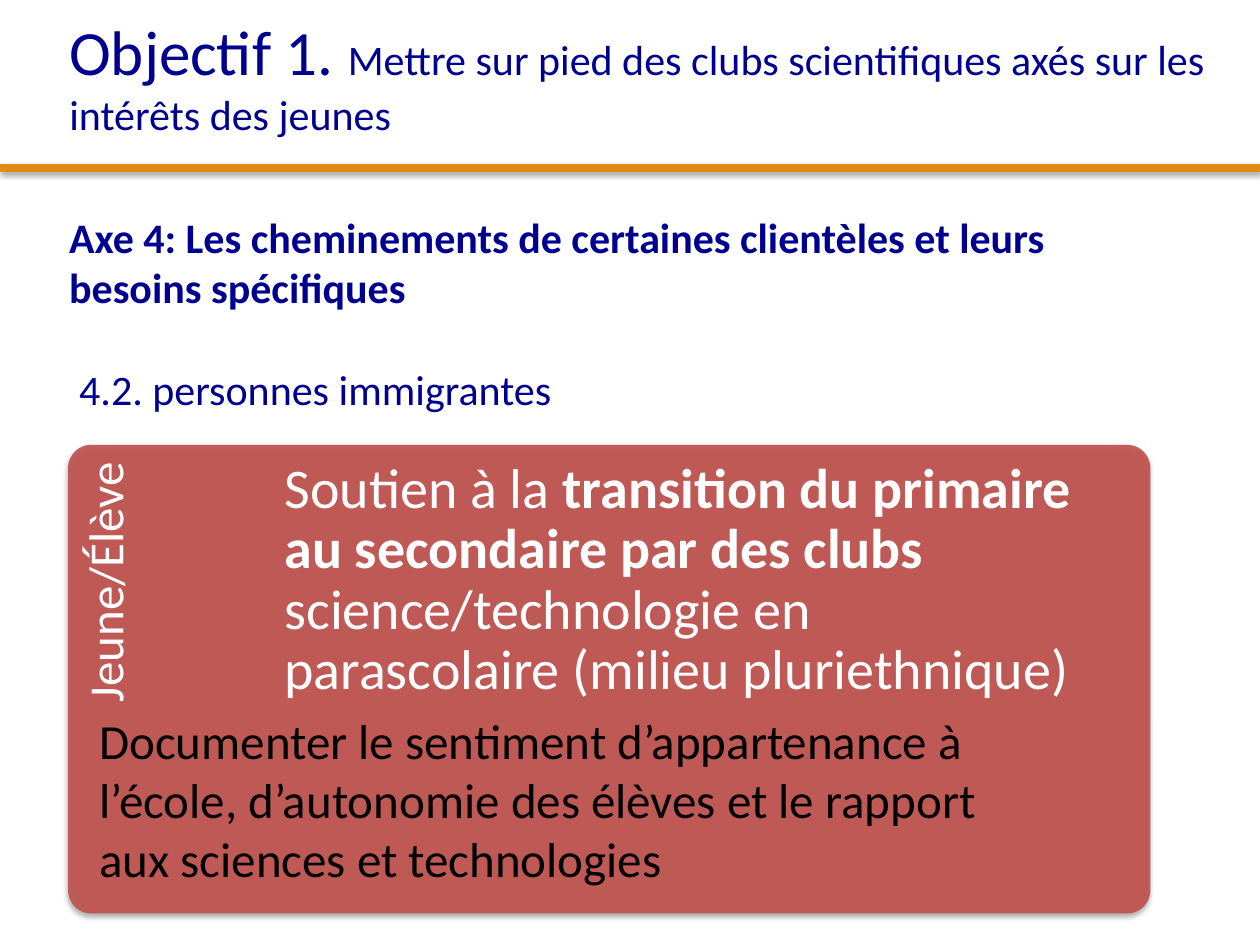
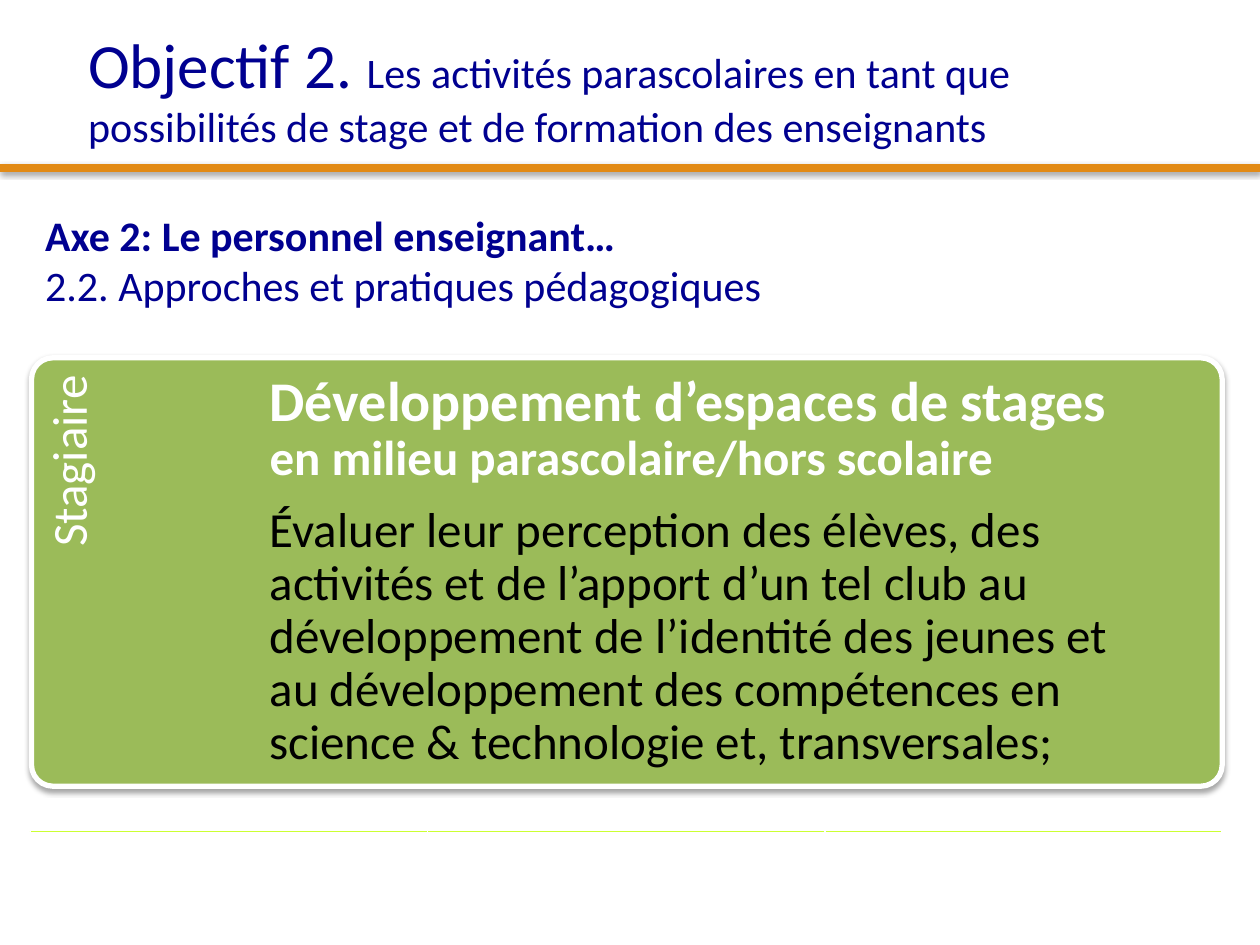
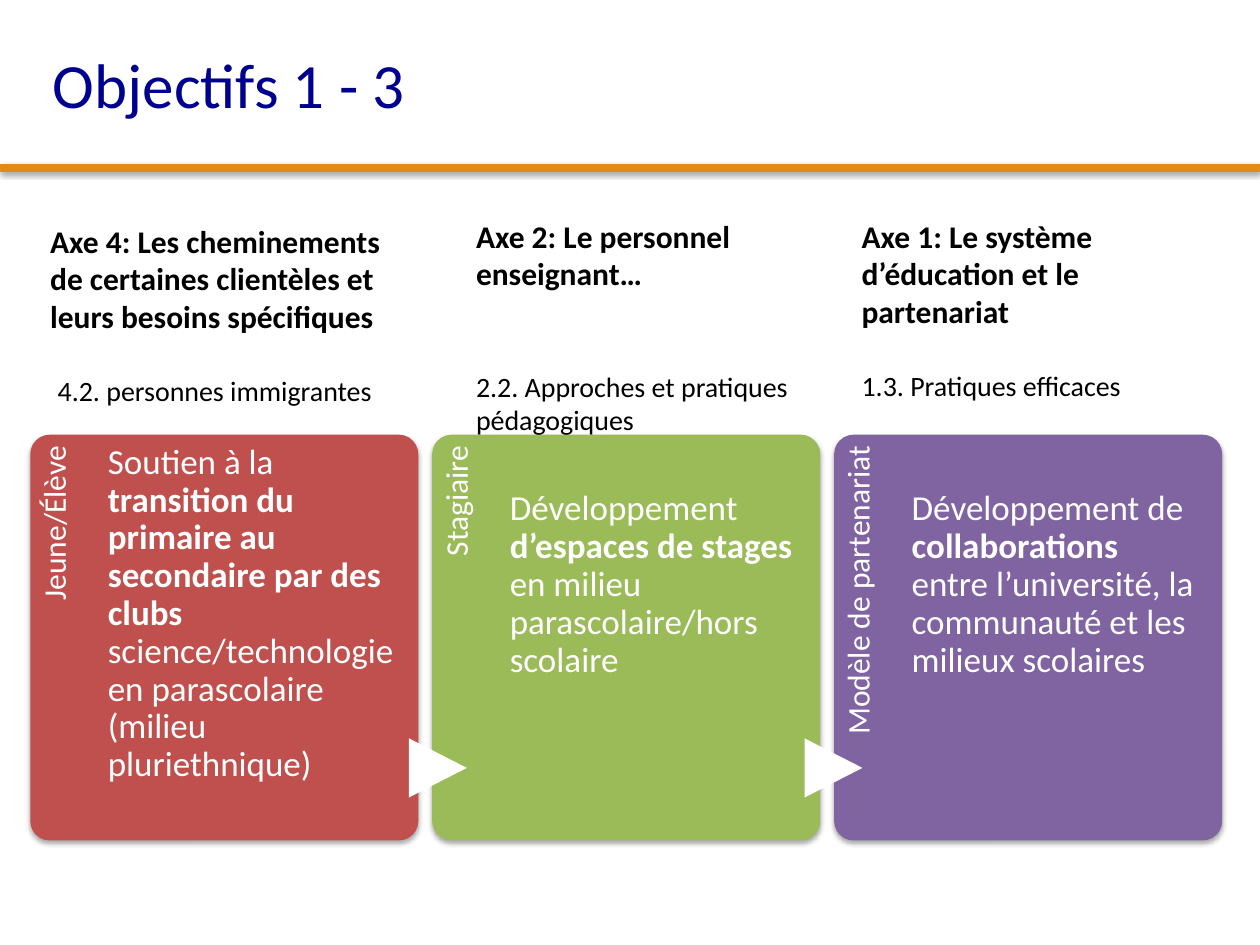
from lxml.etree import SubElement
from pptx import Presentation
from pptx.dml.color import RGBColor
from pptx.enum.shapes import MSO_CONNECTOR, MSO_SHAPE
from pptx.enum.text import MSO_ANCHOR, MSO_AUTO_SIZE, PP_ALIGN
from pptx.oxml.ns import qn
from pptx.util import Inches, Pt

FONT = "Calibri"
NAVY = RGBColor(0x00, 0x00, 0x90)
ORANGE = RGBColor(0xE2, 0x8A, 0x15)
RED = RGBColor(0xC0, 0x50, 0x4D)
GREEN = RGBColor(0x9B, 0xBB, 0x59)
PURPLE = RGBColor(0x80, 0x64, 0xA2)
LIME = RGBColor(0xCC, 0xFF, 0x33)
WHITE = RGBColor(0xFF, 0xFF, 0xFF)
BLACK = RGBColor(0x00, 0x00, 0x00)

TITLE_ONLY = 5
RULE_Y = 1.33
LABEL_W, LABEL_H, BODY_W = 0.2, 0.82, 0.745  # shares of a card


def add_shadow(spPr, alpha, dist):
    effects = spPr.find(qn("a:effectLst"))
    if effects is None:
        effects = SubElement(spPr, qn("a:effectLst"))
    shadow = SubElement(effects, qn("a:outerShdw"), blurRad=str(Pt(3.1)),
                        dist=str(Pt(dist)), dir="5400000", rotWithShape="0")
    color = SubElement(shadow, qn("a:srgbClr"), val=str(BLACK))
    SubElement(color, qn("a:alpha"), val=str(alpha * 1000))


def write(p, runs, size, color, indent=0):
    """Fill a paragraph with runs given as (text, bold) or (text, bold, size)."""
    if indent:
        p._p.get_or_add_pPr().set("marL", str(Inches(indent)))
    p.font.name, p.font.size = FONT, Pt(size)
    p.font.color.rgb = color
    for text, bold, *own_size in runs:
        r = p.add_run()
        r.text, r.font.bold = text, bold
        if own_size:
            r.font.size = Pt(own_size[0])


def add_text(slide, box, insets=(0.1, 0.05, 0.1, 0.05)):
    sp = slide.shapes.add_textbox(*map(Inches, box))
    tf = sp.text_frame
    tf.word_wrap = True
    tf.margin_left, tf.margin_top, tf.margin_right, tf.margin_bottom = map(Inches, insets)
    return sp


def add_slide(prs, title_box, runs):
    """Add a slide with its title and the orange rule below it."""
    slide = prs.slides.add_slide(prs.slide_layouts[TITLE_ONLY])
    title = slide.shapes.title
    title.left, title.top, title.width, title.height = map(Inches, title_box)
    tf = title.text_frame
    tf.word_wrap, tf.auto_size = True, MSO_AUTO_SIZE.NONE
    tf.vertical_anchor = MSO_ANCHOR.TOP
    p = tf.paragraphs[0]
    p.alignment = PP_ALIGN.LEFT
    write(p, runs, 36, NAVY)

    rule = slide.shapes.add_connector(MSO_CONNECTOR.STRAIGHT, 0, Inches(RULE_Y),
                                      prs.slide_width, Inches(RULE_Y))
    rule.line.color.rgb, rule.line.width = ORANGE, Pt(4.5)
    add_shadow(rule._element.spPr, 38, 1.6)
    return slide


def add_axis(slide, box, axis, topic, sizes, color, gap=0, indent=0):
    """Write a bold axis heading and its topic, gap points apart."""
    tf = add_text(slide, box).text_frame
    write(tf.paragraphs[0], [(axis, True)], sizes[0], color)
    p = tf.add_paragraph()
    p.space_before = Pt(gap)
    write(p, [(topic, False)], sizes[1], color, indent)


def add_card(slide, box, fill, label, paragraphs, sizes, drop=0, border=None, opacity=100):
    """Draw a card with an upright label at its left; paragraphs hold (runs, color)."""
    x, y, w, h = box
    label_size, body_size = sizes
    card = slide.shapes.add_shape(MSO_SHAPE.ROUNDED_RECTANGLE, *map(Inches, box))
    card.adjustments[0] = 0.05
    card.fill.solid()
    card.fill.fore_color.rgb = fill
    if opacity < 100:
        color = card._element.spPr.find(qn("a:solidFill"))[0]
        SubElement(color, qn("a:alpha"), val=str(opacity * 1000))
    if border:
        card.line.color.rgb, card.line.width = border, Pt(3)
    else:
        card.line.fill.background()
    card.shadow.inherit = False
    add_shadow(card._element.spPr, 35, 1.8)

    long, short = LABEL_H * h, LABEL_W * w
    label_box = (x + (short - long) / 2, y + (long - short) / 2, long, short)
    side = add_text(slide, label_box, (0, label_size * 0.0037, label_size * 0.005, 0))
    side.rotation = 270
    p = side.text_frame.paragraphs[0]
    p.alignment, p.line_spacing = PP_ALIGN.RIGHT, 0.9
    write(p, [(label, False)], label_size, WHITE)

    tf = add_text(slide, (x + short, y, BODY_W * w, h),
                  (0, body_size * 0.0037 + drop, 0, 0)).text_frame
    for i, (runs, color) in enumerate(paragraphs):
        p = tf.add_paragraph() if i else tf.paragraphs[0]
        p.line_spacing = 0.9
        if i:
            p.space_before = Pt(11)
        write(p, runs, body_size, color)


def add_arrow(slide, x, y):
    arrow = slide.shapes.add_shape(MSO_SHAPE.FLOWCHART_EXTRACT, Inches(x), Inches(y),
                                   Inches(0.47), Inches(0.46))
    arrow.rotation = 90
    arrow.fill.solid()
    arrow.fill.fore_color.rgb = WHITE
    arrow.line.fill.background()
    arrow.shadow.inherit = False


def add_ruled_table(slide, box):
    """Add an empty row of three cells ruled above and below."""
    table = slide.shapes.add_table(1, 3, *map(Inches, box)).table
    table.first_row = table.horz_banding = False
    for cell in table.iter_cells():
        tcPr = cell._tc.get_or_add_tcPr()
        for edge in ("a:lnT", "a:lnB"):
            line = SubElement(tcPr, qn(edge), w=str(Pt(1)))
            SubElement(SubElement(line, qn("a:solidFill")), qn("a:srgbClr"), val=str(LIME))
        cell.fill.background()


TRANSITION = [
    ("Soutien à la ", False),
    ("transition du primaire au secondaire par des clubs ", True),
    ("science/technologie en parascolaire (milieu pluriethnique)", False),
]
STAGES = [
    ("Développement ", False),
    ("d’espaces de stages ", True),
    ("en milieu parascolaire/hors scolaire", False),
]
COLLABORATIONS = [
    ("Développement de ", False),
    ("collaborations ", True),
    ("entre l’université, la communauté et les milieux scolaires", False),
]
AXIS_4 = ("Axe 4: Les cheminements de certaines clientèles et leurs besoins spécifiques",
          "4.2. personnes immigrantes")
AXIS_2 = ("Axe 2: Le personnel enseignant…", "2.2. Approches et pratiques pédagogiques")
AXIS_1 = ("Axe 1: Le système d’éducation et le partenariat", "1.3. Pratiques efficaces")


def build_youth(prs):
    slide = add_slide(prs, (0.45, 0.05, 9.42, 1.72), [
        ("Objectif 1. ", False),
        ("Mettre sur pied des clubs scientifiques axés sur les intérêts des jeunes", False, 24)])
    card = (0.54, 3.53, 8.59, 3.72)
    add_card(slide, card, RED, "Jeune/Élève", [(TRANSITION, WHITE)], (28, 32), opacity=90)
    add_axis(slide, (0.45, 1.63, 8.61, 1.72), *AXIS_4, (24, 24), NAVY, gap=29, indent=0.08)
    note = add_text(slide, (card[0] + 0.15, card[1] + 2.06, 7.55, 1.51))
    write(note.text_frame.paragraphs[0], [(
        "Documenter le sentiment d’appartenance à l’école, d’autonomie des élèves "
        "et le rapport aux sciences et technologies", False)], 28, BLACK)


def build_trainee(prs):
    slide = add_slide(prs, (0.6, 0.15, 8.6, 2.02), [
        ("Objectif 2. ", False),
        ("Les activités parascolaires en tant que possibilités de stage "
         "et de formation des enseignants", False, 24)])
    add_ruled_table(slide, (0.24, 5.38, 9.46, 1.22))
    add_card(slide, (0.25, 2.84, 9.45, 3.4), GREEN, "Stagiaire", [
        ([("Développement d’espaces de stages ", True),
          ("en milieu parascolaire/hors scolaire", True, 28)], WHITE),
        ([("Évaluer leur perception des élèves, des activités et de l’apport d’un tel club "
           "au développement de l’identité des jeunes et au développement des compétences "
           "en science & technologie et, transversales;", False, 28)], BLACK),
    ], (28, 32), border=WHITE)
    add_axis(slide, (0.26, 1.61, 8.95, 0.91), *AXIS_2, (24, 24), NAVY)


def build_summary(prs):
    slide = add_slide(prs, (0.32, 0.31, 3.1, 0.71), [("Objectifs 1 - 3", False)])
    left, top, width, height, pitch = 0.24, 3.45, 3.08, 3.22, 3.19
    cards = [
        (RED, "Jeune/Élève", TRANSITION, 0),
        (GREEN, "Stagiaire", STAGES, 0.37),
        (PURPLE, "Modèle de partenariat", COLLABORATIONS, 0.37),
    ]
    for i, (fill, label, runs, drop) in enumerate(cards):
        add_card(slide, (left + i * pitch, top, width, height), fill, label,
                 [(runs, WHITE)], (18, 20), drop)
    for x in (3.24, 6.38):
        add_arrow(slide, x, top + 0.75 * height)

    axes = [
        ((0.3, 1.71, 3, 1.62), AXIS_4, 22, 0.06),
        ((3.68, 1.67, 2.77, 1.85), AXIS_2, 44, 0),
        ((6.74, 1.67, 2.84, 1.58), AXIS_1, 22, 0),
    ]
    for box, texts, gap, indent in axes:
        add_axis(slide, box, *texts, (18, 16), BLACK, gap, indent)


def main():
    prs = Presentation()
    prs.slide_width, prs.slide_height = Inches(10), Inches(7.5)
    build_youth(prs)
    build_trainee(prs)
    build_summary(prs)
    prs.save("out.pptx")


if __name__ == "__main__":
    main()
